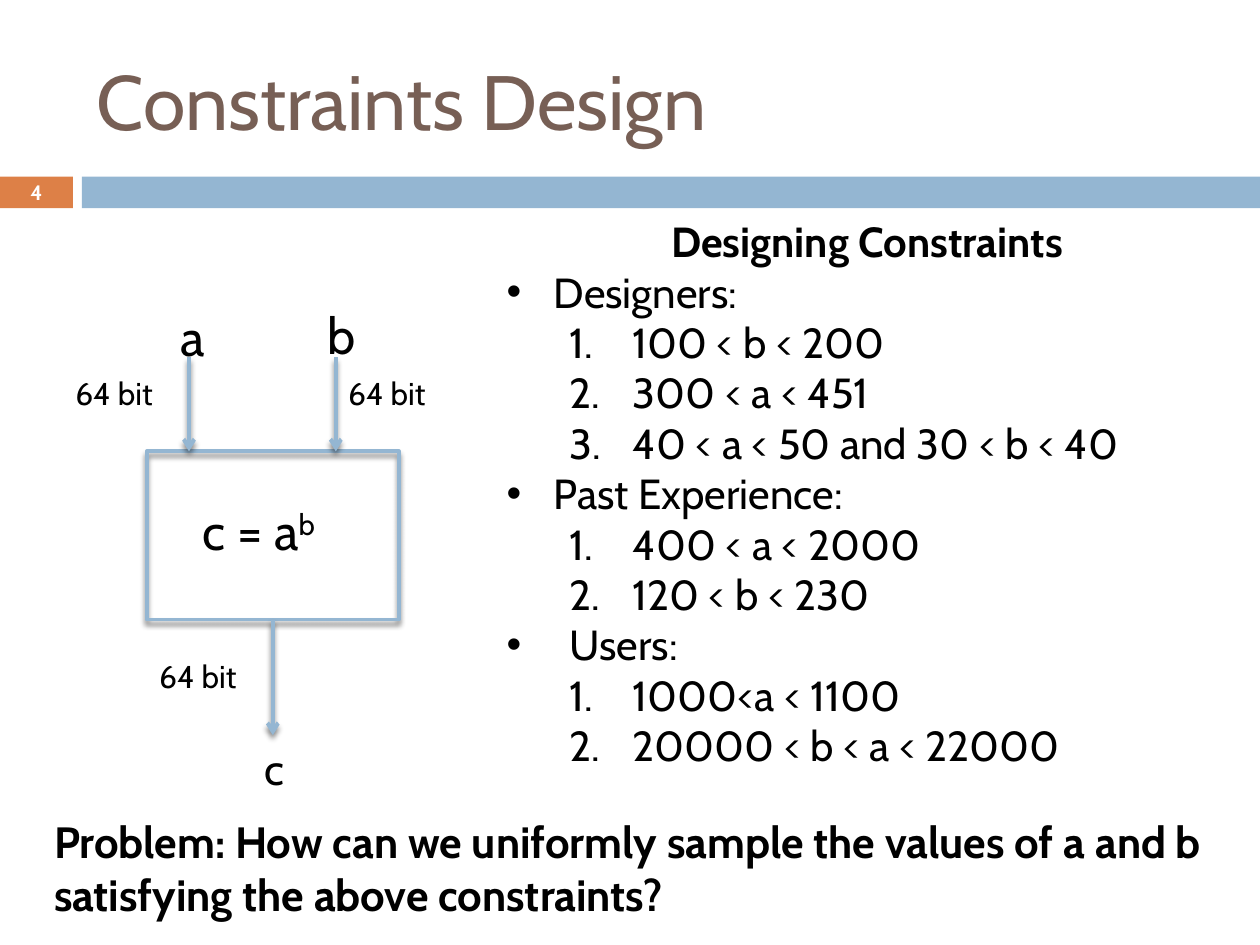
from lxml.etree import SubElement
from pptx import Presentation
from pptx.dml.color import RGBColor
from pptx.enum.shapes import MSO_CONNECTOR, MSO_SHAPE
from pptx.enum.text import MSO_ANCHOR, MSO_AUTO_SIZE, PP_ALIGN
from pptx.oxml.ns import qn
from pptx.util import Cm, Pt

COLORS = {
    "text": "000000",
    "title": "775F55",
    "blue": "94B6D2",
    "orange": "DD8047",
    "white": "FFFFFF",
}
FONT = "Cabin"

CONSTRAINTS = [
    ("Designers:", 0.95, ["100 < b < 200", "300 < a < 451", "40 < a < 50 and 30 < b < 40"]),
    ("Past Experience:", 0.95, ["400 < a < 2000", "120 < b < 230"]),
    ("Users:", 1.27, ["1000<a < 1100", "20000 < b < a < 22000"]),
]


def color(name):
    return RGBColor.from_string(COLORS[name])


def add_run(paragraph, text, size=24, bold=False, fill="text", superscript=False):
    run = paragraph.add_run()
    run.text = text
    run.font.name = FONT
    run.font.size = Pt(size)
    run.font.bold = bold
    run.font.color.rgb = color(fill)
    if superscript:
        run.font._element.set("baseline", "30000")
    return run


def place(shape, left, top, width, height):
    shape.left, shape.top = Cm(left), Cm(top)
    shape.width, shape.height = Cm(width), Cm(height)


def add_text(slide, text, box, wrap=True, align=PP_ALIGN.LEFT, anchor=MSO_ANCHOR.TOP, **style):
    shape = slide.shapes.add_textbox(*(Cm(length) for length in box))
    frame = shape.text_frame
    frame.word_wrap = wrap
    frame.vertical_anchor = anchor
    paragraph = frame.paragraphs[0]
    paragraph.alignment = align
    add_run(paragraph, text, **style)
    return paragraph


def add_bar(slide, left, width, fill):
    bar = slide.shapes.add_shape(MSO_SHAPE.RECTANGLE, Cm(left), Cm(3.56), Cm(width), Cm(0.64))
    bar.shadow.inherit = False
    bar.fill.solid()
    bar.fill.fore_color.rgb = color(fill)
    bar.line.fill.background()


def style_outline(shape):
    shape.line.color.rgb = color("blue")
    shape.line.width = Pt(2.25)
    effects = SubElement(shape._element.spPr, qn("a:effectLst"))
    shadow = SubElement(
        effects, qn("a:outerShdw"), blurRad=str(Pt(3)), dist=str(Pt(2.4)),
        dir="5400000", rotWithShape="0",
    )
    shade = SubElement(shadow, qn("a:srgbClr"), val=COLORS["text"])
    SubElement(shade, qn("a:alpha"), val="45000")


def add_arrow(slide, x, top, bottom):
    arrow = slide.shapes.add_connector(
        MSO_CONNECTOR.STRAIGHT, Cm(x), Cm(top), Cm(x), Cm(bottom)
    )
    style_outline(arrow)
    SubElement(arrow.line._get_or_add_ln(), qn("a:tailEnd"), type="arrow")


def add_list_item(frame, text, level, margin, hanging, numbered=False):
    paragraph = frame.add_paragraph()
    paragraph.level = level
    paragraph.alignment = PP_ALIGN.LEFT
    paragraph.space_before = Pt(0)
    properties = paragraph._p.get_or_add_pPr()
    properties.set("marL", str(Cm(margin)))
    properties.set("indent", str(Cm(-hanging)))
    if numbered:
        SubElement(properties, qn("a:buFont"), typeface="+mj-lt")
        SubElement(properties, qn("a:buAutoNum"), type="arabicPeriod")
    else:
        SubElement(properties, qn("a:buFont"), typeface="Arial")
        SubElement(properties, qn("a:buChar"), char="•")
    add_run(paragraph, text)


def fill_title(slide):
    title = slide.shapes.title
    place(title, 1.7, 0.64, 22.66, 2.74)
    title.text_frame.vertical_anchor = MSO_ANCHOR.MIDDLE
    paragraph = title.text_frame.paragraphs[0]
    paragraph.alignment = PP_ALIGN.LEFT
    add_run(paragraph, "Constraints Design", size=44, fill="title")


def fill_constraints(slide):
    body = slide.placeholders[1]
    place(body, 9.96, 4.22, 15.04, 12.57)
    frame = body.text_frame
    frame.auto_size = MSO_AUTO_SIZE.NONE
    frame.vertical_anchor = MSO_ANCHOR.TOP
    heading = frame.paragraphs[0]
    heading.alignment = PP_ALIGN.CENTER
    heading.space_before = Pt(0)
    properties = heading._p.get_or_add_pPr()
    properties.set("marL", "0")
    properties.set("indent", "0")
    SubElement(properties, qn("a:buNone"))
    add_run(heading, "Designing Constraints", bold=True)
    for source, indent, rules in CONSTRAINTS:
        add_list_item(frame, source, 0, indent, indent)
        for rule in rules:
            add_list_item(frame, rule, 1, 2.54, 1.27, numbered=True)


def add_diagram(slide):
    block = slide.shapes.add_shape(MSO_SHAPE.RECTANGLE, Cm(2.96), Cm(9.1), Cm(5.08), Cm(3.39))
    block.fill.background()
    style_outline(block)
    for x, top, bottom in [(3.81, 7.2, 9.1), (6.77, 7.2, 9.1), (5.5, 12.49, 14.82)]:
        add_arrow(slide, x, top, bottom)
    add_text(slide, "a", (3.39, 6.03, 1.37, 1.5), size=29)
    add_text(slide, "b", (6.35, 5.99, 1.09, 1.5), wrap=False, size=29)
    add_text(slide, "c", (5.08, 14.82, 0.86, 1.32), wrap=False, size=25)
    for left, top in [(1.27, 7.41), (6.77, 7.41), (2.96, 13.12)]:
        add_text(slide, "64 bit", (left, top, 3.18, 1.02), size=18)
    formula = add_text(slide, "c = a", (3.84, 9.95, 3.12, 1.5), wrap=False, size=29)
    add_run(formula, "b", size=29, superscript=True)


def main():
    presentation = Presentation()
    presentation.slide_width, presentation.slide_height = Cm(25.4), Cm(19.05)
    slide = presentation.slides.add_slide(presentation.slide_layouts[1])
    add_bar(slide, 0, 1.47, "orange")
    add_bar(slide, 1.65, 23.75, "blue")
    fill_title(slide)
    fill_constraints(slide)
    add_text(
        slide,
        "Problem: How can we uniformly sample the values of a and b satisfying the above constraints?",
        (0.84, 16.31, 23.7, 2.39), size=25, bold=True,
    )
    add_text(
        slide, "4", (0, 3.53, 1.47, 0.69), align=PP_ALIGN.CENTER,
        anchor=MSO_ANCHOR.MIDDLE, size=11.9, bold=True, fill="white",
    )
    add_diagram(slide)
    presentation.save("out.pptx")


if __name__ == "__main__":
    main()
